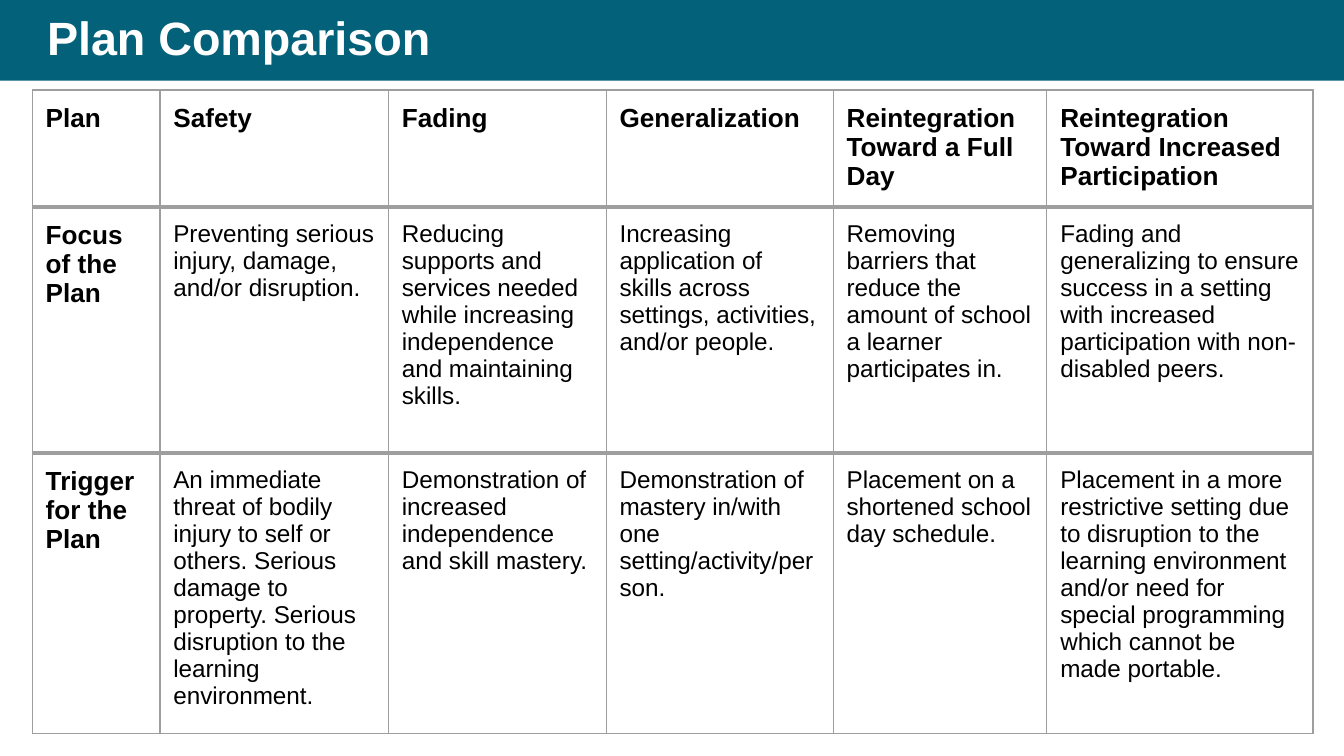
from dataclasses import dataclass

from lxml.etree import SubElement
from pptx import Presentation
from pptx.dml.color import RGBColor
from pptx.enum.shapes import MSO_SHAPE
from pptx.enum.text import MSO_ANCHOR, PP_ALIGN
from pptx.oxml.ns import qn
from pptx.util import Inches, Pt


@dataclass(frozen=True)
class Theme:
    font: str = "Arial"
    band: str = "03617A"
    paper: str = "FFFFFF"
    ink: str = "000000"
    rule: str = "9E9E9E"
    title_size: float = 25
    heading_size: float = 14
    body_size: float = 13
    thin: float = 0.75
    heavy: float = 2.25


theme = Theme()


def write(frame, text, size, color=theme.ink, bold=False, spacing=None,
          anchor=MSO_ANCHOR.TOP, inset=(0.1, 0.1)):
    frame.word_wrap = True
    frame.vertical_anchor = anchor
    frame.margin_left = frame.margin_right = Inches(inset[0])
    frame.margin_top = frame.margin_bottom = Inches(inset[1])
    para = frame.paragraphs[0]
    para.alignment = PP_ALIGN.LEFT
    para.line_spacing = spacing
    span = para.add_run()
    span.text = text
    span.font.name = theme.font
    span.font.size = Pt(size)
    span.font.bold = bold
    span.font.color.rgb = RGBColor.from_string(color)


def add_border(cell, side, width):
    properties = cell._tc.get_or_add_tcPr()
    line = SubElement(properties, qn(f"a:ln{side}"), w=str(Pt(width)))
    fill = SubElement(line, qn("a:solidFill"))
    SubElement(fill, qn("a:srgbClr"), val=theme.rule)


# Widescreen page, 16 to 9
deck = Presentation()
deck.slide_width = Inches(10)
deck.slide_height = deck.slide_width * 9 // 16
page = deck.slides.add_slide(deck.slide_layouts.get_by_name("Title Only"))
band_height = Inches(0.6)

# Title on a full-width band
title = page.shapes.title
title.left, title.top = Inches(0.28), 0
title.width, title.height = Inches(9.24), band_height
write(title.text_frame, "Plan Comparison", theme.title_size, color=theme.paper,
      bold=True, spacing=0.9, anchor=MSO_ANCHOR.MIDDLE, inset=(0.07, 0.04))

band = page.shapes.add_shape(MSO_SHAPE.RECTANGLE, 0, 0, deck.slide_width, band_height)
band.shadow.inherit = False
band.fill.solid()
band.fill.fore_color.rgb = RGBColor.from_string(theme.band)
band.line.fill.background()
title.element.addprevious(band.element)

# Comparison table
plans = [
    ["Plan", "Safety", "Fading", "Generalization",
     "Reintegration Toward a Full Day",
     "Reintegration Toward Increased Participation"],
    ["Focus of the Plan",
     "Preventing serious injury, damage, and/or disruption.",
     "Reducing supports and services needed while increasing independence "
     "and maintaining skills.",
     "Increasing application of skills across settings, activities, and/or people.",
     "Removing barriers that reduce the amount of school a learner participates in.",
     "Fading and generalizing to ensure success in a setting with increased "
     "participation with non-disabled peers."],
    ["Trigger for the Plan",
     "An immediate threat of bodily injury to self or others. Serious damage to "
     "property. Serious disruption to the learning environment.",
     "Demonstration of increased independence and skill mastery.",
     "Demonstration of mastery in/with one setting/activity/person.",
     "Placement on a shortened school day schedule.",
     "Placement in a more restrictive setting due to disruption to the learning "
     "environment and/or need for special programming which cannot be made portable."],
]
column_widths = [0.95, 1.7, 1.62, 1.69, 1.59, 1.98]
row_heights = [0.87, 1.83, 2.09]

table = page.shapes.add_table(
    len(row_heights), len(column_widths), Inches(0.24), Inches(0.67),
    Inches(sum(column_widths)), Inches(sum(row_heights))).table
table.first_row = table.horz_banding = False
for column, width in zip(table.columns, column_widths):
    column.width = Inches(width)
for row, height in zip(table.rows, row_heights):
    row.height = Inches(height)

# Cells: bold headings, heavy rules between rows
last_row = len(plans) - 1
for row_number, texts in enumerate(plans):
    above = theme.heavy if row_number > 0 else theme.thin
    below = theme.heavy if row_number < last_row else theme.thin
    for column_number, text in enumerate(texts):
        cell = table.cell(row_number, column_number)
        heading = row_number == 0 or column_number == 0
        size = theme.heading_size if heading else theme.body_size
        write(cell.text_frame, text, size, bold=heading)
        cell.vertical_anchor = MSO_ANCHOR.TOP
        cell.margin_left = cell.margin_right = Inches(0.1)
        cell.margin_top = cell.margin_bottom = Inches(0.1)
        for side, width in zip("LRTB", (theme.thin, theme.thin, above, below)):
            add_border(cell, side, width)
        cell.fill.solid()
        cell.fill.fore_color.rgb = RGBColor.from_string(theme.paper)

deck.save("out.pptx")
